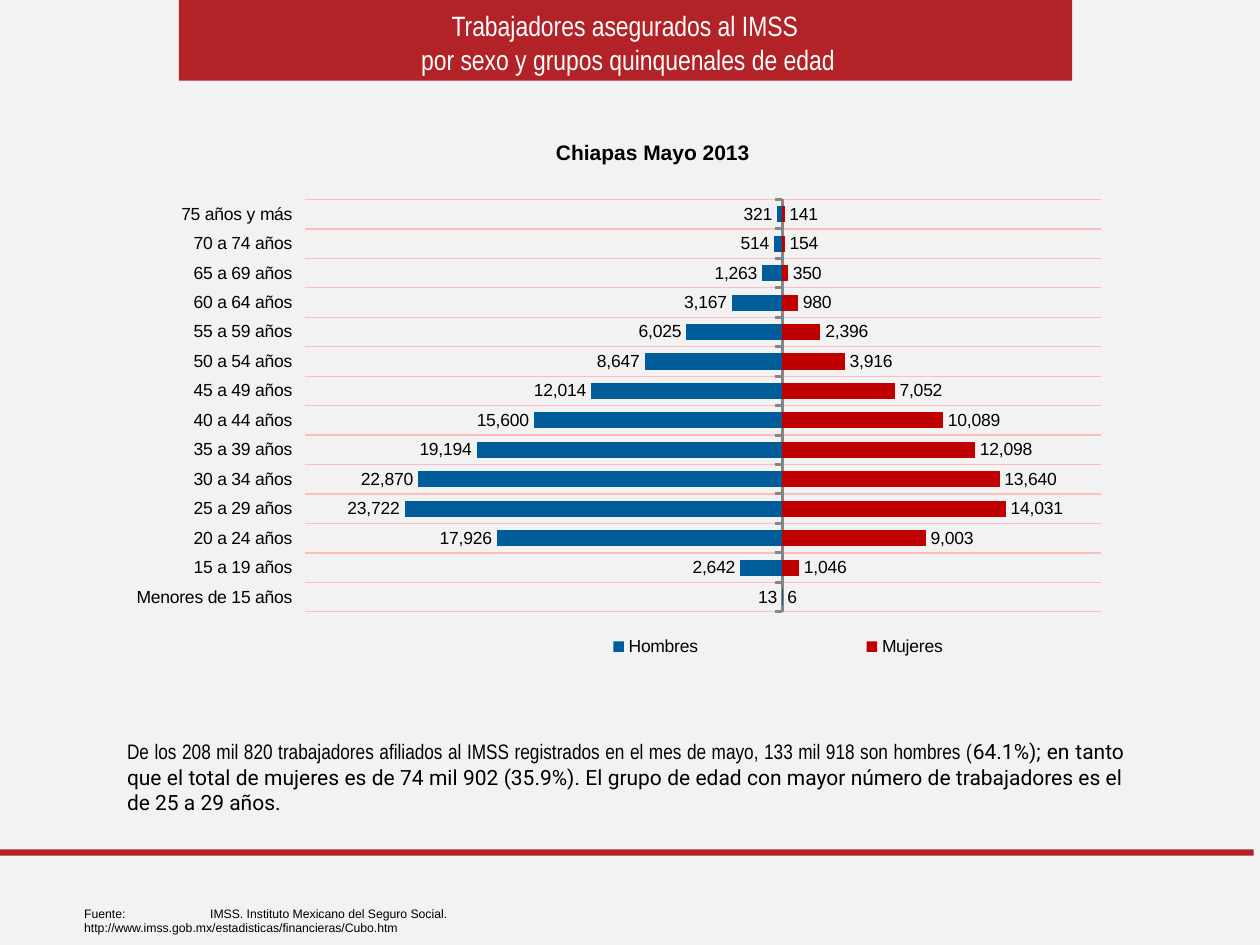
import dataclasses

import lxml.etree
import pptx
import pptx.chart.data
import pptx.dml.color
import pptx.enum.chart
import pptx.enum.shapes
import pptx.enum.text
import pptx.oxml
import pptx.oxml.ns
import pptx.util

COLUMNS, ROWS = 100, 75
AGE_GROUPS = (
    ["Menores de 15 años"]
    + [f"{start} a {start + 4} años" for start in range(15, 75, 5)]
    + ["75 años y más"]
)
WOMEN = [6, 1046, 9003, 14031, 13640, 12098, 10089, 7052, 3916, 2396, 980, 350, 154, 141]
MEN = [13, 2642, 17926, 23722, 22870, 19194, 15600, 12014, 8647, 6025, 3167, 1263, 514, 321]


@dataclasses.dataclass(frozen=True)
class Theme:
    """Colours, fonts and type sizes of the slide."""

    background: str = "F2F2F2"
    band: str = "B22227"
    text: str = "000000"
    heading: str = "FFFFFF"
    women: str = "C00000"
    men: str = "005D99"
    grid: str = "FFBCBC"
    axis: str = "868686"
    sans: str = "Arial"
    narrow: str = "Arial Narrow"
    body: str = "Roboto"
    heading_size: int = 16
    body_size: int = 12
    label_size: int = 10
    source_size: int = 7


THEME = Theme()


def color(code):
    """Turn a hex code into a colour."""
    return pptx.dml.color.RGBColor.from_string(code)


def place(left, top, width, height):
    """Turn grid columns and rows into slide lengths."""
    cell = pptx.util.Inches(10) / COLUMNS
    return [pptx.util.Emu(round(cell * units)) for units in (left, top, width, height)]


def style_font(font, size, name, code=THEME.text, bold=None):
    """Set size, typeface, colour and weight of a font."""
    font.size = pptx.util.Pt(size)
    font.name = name
    font.color.rgb = color(code)
    font.bold = bold


def add_band(page, *grid):
    """Add a plain red rectangle."""
    band = page.shapes.add_shape(pptx.enum.shapes.MSO_SHAPE.RECTANGLE, *place(*grid))
    band.shadow.inherit = False
    band.fill.solid()
    band.fill.fore_color.rgb = color(THEME.band)
    band.line.fill.background()


def add_text(page, grid, lines, size, font_name, code=THEME.text, align=None):
    """Add a wrapped text box with one paragraph per line."""
    frame = page.shapes.add_textbox(*place(*grid)).text_frame
    frame.word_wrap = True
    frame.text = "\n".join(lines)
    for para in frame.paragraphs:
        para.alignment = align
        for span in para.runs:
            style_font(span.font, size, font_name, code)
    return frame


def add_summary(page, grid, narrow_text, body_text):
    """Add the justified summary set in two typefaces."""
    frame = add_text(page, grid, [narrow_text], THEME.body_size, THEME.narrow,
                     align=pptx.enum.text.PP_ALIGN.JUSTIFY)
    frame.vertical_anchor = pptx.enum.text.MSO_ANCHOR.MIDDLE
    span = frame.paragraphs[0].add_run()
    span.text = body_text
    style_font(span.font, THEME.body_size, THEME.body)


def add_source(page, grid, text):
    """Add the source note with its tab stop."""
    frame = add_text(page, grid, [text], THEME.source_size, THEME.sans)
    properties = frame.paragraphs[0]._p.get_or_add_pPr()
    tabs = lxml.etree.SubElement(properties, pptx.oxml.ns.qn("a:tabLst"))
    lxml.etree.SubElement(tabs, pptx.oxml.ns.qn("a:tab"),
                          pos=str(pptx.util.Inches(1)), algn="l")


def set_layout(element, x, y, width=None, height=None, inner=False):
    """Give a chart part a manual layout as shares of the chart."""
    values = {"layoutTarget": "inner" if inner else None, "xMode": "edge", "yMode": "edge",
              "x": x, "y": y, "w": width, "h": height}
    parts = "".join(f'<c:{tag} val="{value}"/>' for tag, value in values.items()
                    if value is not None)
    layout = pptx.oxml.parse_xml(
        f'<c:layout {pptx.oxml.ns.nsdecls("c")}><c:manualLayout>{parts}'
        "</c:manualLayout></c:layout>")
    for old in element.findall(pptx.oxml.ns.qn("c:layout")):
        element.remove(old)
    leading = [child for child in element
               if child.tag in map(pptx.oxml.ns.qn, ("c:tx", "c:legendPos"))]
    element.insert(len(leading), layout)


def style_series(series, code, number_format):
    """Colour a series and show its values."""
    series.invert_if_negative = False
    series.format.fill.solid()
    series.format.fill.fore_color.rgb = color(code)
    labels = series.data_labels
    labels.show_value = True
    labels.number_format = number_format
    labels.number_format_is_linked = False
    labels.position = pptx.enum.chart.XL_LABEL_POSITION.OUTSIDE_END
    style_font(labels.font, THEME.label_size, THEME.sans)


def style_axes(chart):
    """Set the age axis with its grid and hide the value axis."""
    ages, workers = chart.category_axis, chart.value_axis
    ages.tick_label_position = pptx.enum.chart.XL_TICK_LABEL_POSITION.LOW
    ages.major_tick_mark = pptx.enum.chart.XL_TICK_MARK.OUTSIDE
    ages.has_major_gridlines = True
    for line, code, width in ((ages.major_gridlines.format.line, THEME.grid, 0.75),
                              (ages.format.line, THEME.axis, 1.75)):
        line.color.rgb = color(code)
        line.width = pptx.util.Pt(width)
    workers.minimum_scale, workers.maximum_scale = -30000, 20000
    workers.has_major_gridlines = False
    workers.visible = False


def add_pyramid(page, grid, title):
    """Add the population pyramid as a bar chart."""
    data = pptx.chart.data.CategoryChartData(number_format="#,##0")
    data.categories = AGE_GROUPS
    data.add_series("Mujeres", WOMEN)
    data.add_series("Hombres ", [-count for count in MEN])
    chart = page.shapes.add_chart(
        pptx.enum.chart.XL_CHART_TYPE.BAR_CLUSTERED, *place(*grid), data).chart
    style_font(chart.font, THEME.label_size, THEME.sans)
    chart.has_title = True
    chart.chart_title.text_frame.text = title
    span = chart.chart_title.text_frame.paragraphs[0].runs[0]
    style_font(span.font, THEME.body_size, THEME.sans, bold=True)
    chart.has_legend = True
    chart.legend.position = pptx.enum.chart.XL_LEGEND_POSITION.BOTTOM
    chart.legend.include_in_layout = False
    style_axes(chart)
    plot = chart.plots[0]
    plot.gap_width, plot.overlap, plot.vary_by_categories = 83, 100, False
    women, men = plot.series
    style_series(women, THEME.women, "#,##0")
    style_series(men, THEME.men, "#,##0;[Black]#,##0")
    area = chart._chartSpace.chart
    set_layout(area.plotArea, 0.2, 0.17, 0.74, 0.71, inner=True)
    set_layout(chart.legend._element, 0.34, 0.9, 0.6, 0.08)
    set_layout(chart.chart_title._element, 0.43, 0.06)


def main():
    """Build the slide and save the deck."""
    deck = pptx.Presentation()
    deck.slide_width, deck.slide_height = place(0, 0, COLUMNS, ROWS)[2:]
    page = deck.slides.add_slide(deck.slide_layouts[6])
    page.background.fill.solid()
    page.background.fill.fore_color.rgb = color(THEME.background)
    add_band(page, 14.2, 0, 70.9, 6.4)
    add_band(page, 0, 67.4, 99.5, 0.5)
    add_summary(
        page, (9.1, 57, 81.1, 9.3),
        "De los 208 mil 820 trabajadores afiliados al IMSS registrados en el mes de mayo, "
        "133 mil 918 son hombres (",
        "64.1%); en tanto que el total de mujeres es de 74 mil 902 (35.9%). El grupo de edad "
        "con mayor número de trabajadores es el de 25 a 29 años.")
    add_source(page, (5.7, 71.4, 50.8, 2.2),
               "Fuente:\tIMSS. Instituto Mexicano del Seguro Social. \v"
               "http://www.imss.gob.mx/estadisticas/financieras/Cubo.htm")
    add_text(page, (14.6, 0.2, 70.5, 6.4),
             ["Trabajadores asegurados al IMSS ", "por sexo y grupos quinquenales de edad"],
             THEME.heading_size, THEME.narrow, THEME.heading,
             pptx.enum.text.PP_ALIGN.CENTER)
    add_pyramid(page, (7.1, 8, 85.4, 46.1), "Chiapas Mayo 2013")
    deck.save("out.pptx")


if __name__ == "__main__":
    main()
